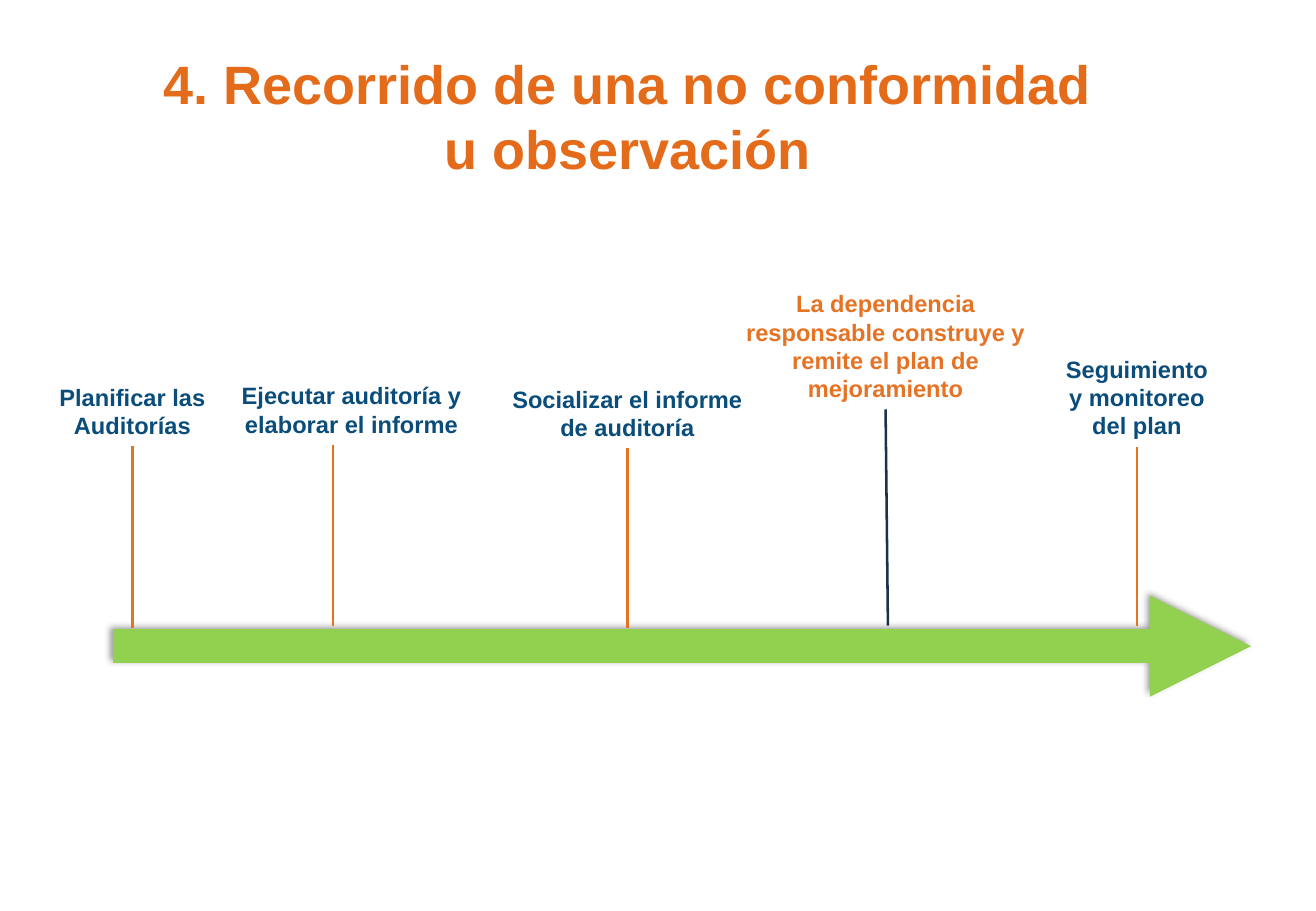
from dataclasses import dataclass

from lxml import etree
from pptx import Presentation
from pptx.dml.color import RGBColor
from pptx.enum import shapes, text
from pptx.oxml import ns
from pptx.util import Pt


@dataclass(frozen=True)
class Theme:
    """Colours, typeface and type sizes of the slide."""
    title: str = "E36B1A"
    step: str = "0A4D7A"
    accent: str = "E67324"
    dark: str = "1C314B"
    arrow: str = "92D050"
    shadow: str = "000000"
    face: str = "Arial"
    title_size: int = 32
    step_size: int = 14


THEME = Theme()

STEPS = [
    ("Planificar las Auditorías", (27.4, 223.2, 102.2, 41), THEME.step,
     (78.5, 264.2), (78.5, 372.2), THEME.accent),
    ("Ejecutar auditoría y elaborar el informe", (134.6, 222.5, 147.6, 41), THEME.step,
     (197.3, 263.5), (197.3, 370.8), THEME.accent),
    ("Socializar el informe de auditoría", (295.2, 224.6, 153.4, 41), THEME.step,
     (371.9, 265.6), (371.9, 372.2), THEME.accent),
    ("La dependencia responsable construye y remite el plan de mejoramiento",
     (432, 167.8, 185.8, 74.9), THEME.accent, (524.9, 242.7), (526.3, 370.8), THEME.dark),
    ("Seguimiento y monitoreo del plan", (622.8, 206.6, 102.2, 58.3), THEME.step,
     (673.9, 264.9), (673.9, 370.8), THEME.accent),
]


def apply_format(target, values):
    """Set each attribute of the target from a dict of values."""
    for name, value in values.items():
        setattr(target, name, value)


def add_element(parent, tag, **attributes):
    """Append a drawing element and return it."""
    return etree.SubElement(parent, ns.qn(tag), attributes)


def write_centred(holder, wording, size, colour, anchor):
    """Write one bold centred paragraph into a shape."""
    frame = holder.text_frame
    frame.text = wording
    apply_format(frame, {"word_wrap": True, "vertical_anchor": anchor,
                         "auto_size": text.MSO_AUTO_SIZE.SHAPE_TO_FIT_TEXT})
    paragraph = frame.paragraphs[0]
    paragraph.alignment = text.PP_ALIGN.CENTER
    font = paragraph.runs[0].font
    apply_format(font, {"name": THEME.face, "size": Pt(size), "bold": True})
    font.color.rgb = RGBColor.from_string(colour)


def add_title(slide, wording):
    """Place and format the slide title."""
    title = slide.shapes.title
    apply_format(title, {"left": Pt(83.5), "top": Pt(25.9),
                         "width": Pt(577.4), "height": Pt(85)})
    write_centred(title, wording, THEME.title_size, THEME.title, text.MSO_ANCHOR.MIDDLE)


def add_line(slide, start, end, colour, width):
    """Draw a straight line and return it with its empty effect list."""
    line = slide.shapes.add_connector(
        shapes.MSO_CONNECTOR.STRAIGHT, *(Pt(value) for value in start + end))
    line.line.width = Pt(width)
    line.line.color.rgb = RGBColor.from_string(colour)
    effects = add_element(line._element.spPr, "a:effectLst")
    return line, effects


def add_timeline(slide):
    """Draw the thick shadowed arrow that carries the steps."""
    timeline, effects = add_line(slide, (67, 383), (741.6, 383), THEME.arrow, 20)
    add_element(timeline.line._get_or_add_ln(), "a:tailEnd", type="triangle")
    shadow = add_element(effects, "a:outerShdw", blurRad=str(Pt(4)), dist=str(Pt(3)),
                         dir=str(225 * 60000), algn="br", rotWithShape="0")
    tint = add_element(shadow, "a:srgbClr", val=THEME.shadow)
    add_element(tint, "a:alpha", val="40000")


def add_step(slide, wording, box, colour, start, end, stem_colour):
    """Add a step label and its stem, joined where the stem is centred."""
    label = slide.shapes.add_textbox(*(Pt(value) for value in box))
    write_centred(label, wording, THEME.step_size, colour, text.MSO_ANCHOR.TOP)
    stem, _ = add_line(slide, start, end, stem_colour, 1.5)
    left, _, width, _ = box
    if abs(left + width / 2 - start[0]) < 1:
        stem.begin_connect(label, 2)


def main():
    """Build the slide and save it."""
    deck = Presentation()
    apply_format(deck, {"slide_width": Pt(780), "slide_height": Pt(540)})
    slide = deck.slides.add_slide(deck.slide_layouts[5])
    add_title(slide, "4. Recorrido de una no conformidad u observación")
    add_timeline(slide)
    for step in STEPS:
        add_step(slide, *step)
    deck.save("out.pptx")


if __name__ == "__main__":
    main()
